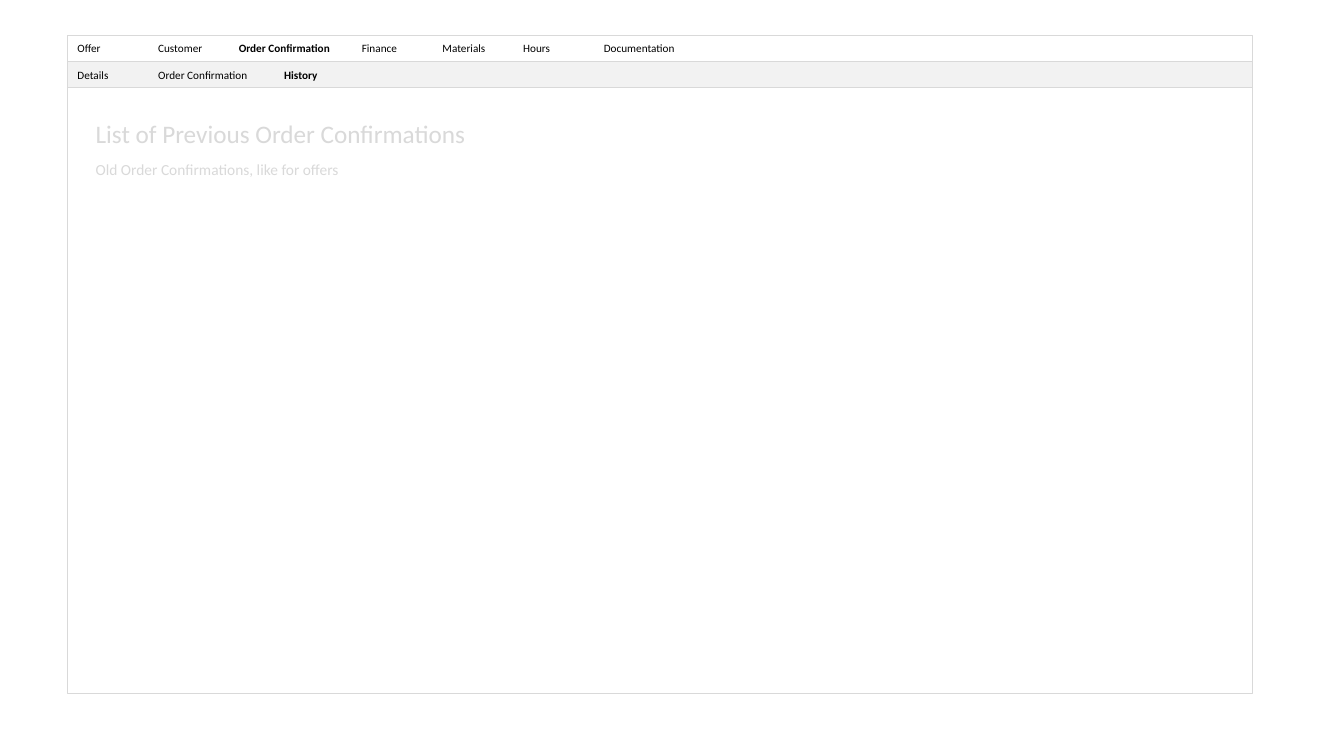
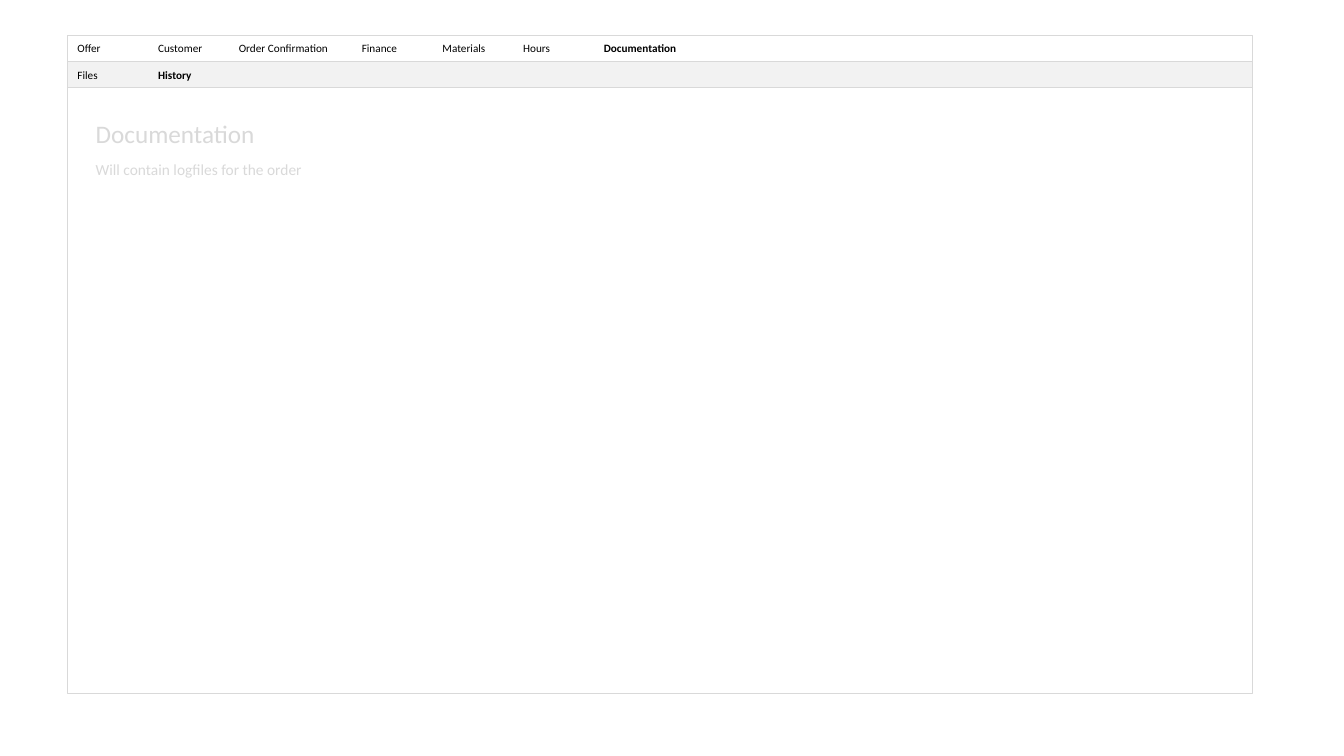
from pptx import Presentation
from pptx.dml.color import RGBColor
from pptx.enum.shapes import MSO_SHAPE
from pptx.enum.text import MSO_AUTO_SIZE, PP_ALIGN
from pptx.util import Inches, Pt

# Shared colours and fonts
WHITE = RGBColor(0xFF, 0xFF, 0xFF)
BLACK = RGBColor(0x00, 0x00, 0x00)
PALE_GREY = RGBColor(0xF2, 0xF2, 0xF2)
GREY = RGBColor(0xD9, 0xD9, 0xD9)
FONT = "Calibri"
TAB_FORMAT = {"name": FONT, "size": Pt(8), "bold": False}
TITLE_FORMAT = {"name": FONT, "size": Pt(18)}
NOTE_FORMAT = {"name": FONT, "size": Pt(11)}

# Window geometry, in inches
WINDOW_LEFT, WINDOW_TOP = 0.67, 0.35
WINDOW_WIDTH, WINDOW_HEIGHT = 11.75, 6.53
BAR_HEIGHT = 0.26
TAB_PITCH, TAB_WIDTH, TAB_HEIGHT = 0.8, 1.14, 0.24

# Bar styles: fill, drop of the labels, pitch after the long label
MENU_BAR = {"fill": WHITE, "label_drop": 0.01, "long_pitch": 1.22}
SUBMENU_BAR = {"fill": PALE_GREY, "label_drop": 0.02, "long_pitch": 1.25}

LONG_TAB = "Order Confirmation"
MENU = ["Offer", "Customer", LONG_TAB, "Finance", "Materials", "Hours",
        "Documentation"]

PAGES = [
    {"menu_active": LONG_TAB,
     "submenu": ["Details", LONG_TAB, "History"],
     "submenu_active": "History",
     "title": "List of Previous Order Confirmations",
     "note": "Old Order Confirmations, like for offers"},
    {"menu_active": "Documentation",
     "submenu": ["Files", "History"],
     "submenu_active": "History",
     "title": "Documentation",
     "note": "Will contain logfiles for the order"},
]


def add_panel(slide, left, top, width, height, fill):
    panel = slide.shapes.add_shape(
        MSO_SHAPE.RECTANGLE,
        Inches(left), Inches(top), Inches(width), Inches(height))
    panel.shadow.inherit = False
    panel.fill.solid()
    panel.fill.fore_color.rgb = fill
    panel.line.color.rgb = GREY
    panel.line.width = Pt(1)


def add_label(slide, left, top, width, height, text, color, font_format):
    label = slide.shapes.add_textbox(
        Inches(left), Inches(top), Inches(width), Inches(height))
    frame = label.text_frame
    frame.word_wrap = True
    frame.auto_size = MSO_AUTO_SIZE.SHAPE_TO_FIT_TEXT
    paragraph = frame.paragraphs[0]
    paragraph.alignment = PP_ALIGN.LEFT
    run = paragraph.add_run()
    run.text = text
    run.font.color.rgb = color
    for attribute, value in font_format.items():
        setattr(run.font, attribute, value)


def add_tab_bar(slide, left, top, width, tabs, active, style):
    """Draw one bar with its tabs, the active one in bold."""
    add_panel(slide, left, top, width, BAR_HEIGHT, style["fill"])
    tab_left = left
    for tab in tabs:
        add_label(slide, tab_left, top + style["label_drop"], TAB_WIDTH,
                  TAB_HEIGHT, tab, BLACK, TAB_FORMAT | {"bold": tab == active})
        tab_left += style["long_pitch"] if tab == LONG_TAB else TAB_PITCH


def add_content(slide, left, top, width, height, title, note):
    """Draw the page body with its heading and note."""
    add_panel(slide, left, top, width, height, WHITE)
    add_label(slide, left + 0.18, top + 0.25, 4.58, 0.4,
              title, GREY, TITLE_FORMAT)
    add_label(slide, left + 0.18, top + 0.67, 8.38, 0.29,
              note, GREY, NOTE_FORMAT)


def add_window(slide, left, top, width, height, page):
    """Stack the menu, the submenu and the content."""
    submenu_top = top + BAR_HEIGHT
    content_top = submenu_top + BAR_HEIGHT
    add_tab_bar(slide, left, top, width, MENU, page["menu_active"], MENU_BAR)
    add_tab_bar(slide, left, submenu_top, width, page["submenu"],
                page["submenu_active"], SUBMENU_BAR)
    add_content(slide, left, content_top, width, height - 2 * BAR_HEIGHT,
                page["title"], page["note"])


def main():
    presentation = Presentation()
    presentation.slide_width = Inches(13.33)
    presentation.slide_height = Inches(7.5)
    blank_layout = presentation.slide_layouts[6]
    for page in PAGES:
        slide = presentation.slides.add_slide(blank_layout)
        add_window(slide, WINDOW_LEFT, WINDOW_TOP, WINDOW_WIDTH,
                   WINDOW_HEIGHT, page)
    presentation.save("out.pptx")


if __name__ == "__main__":
    main()
